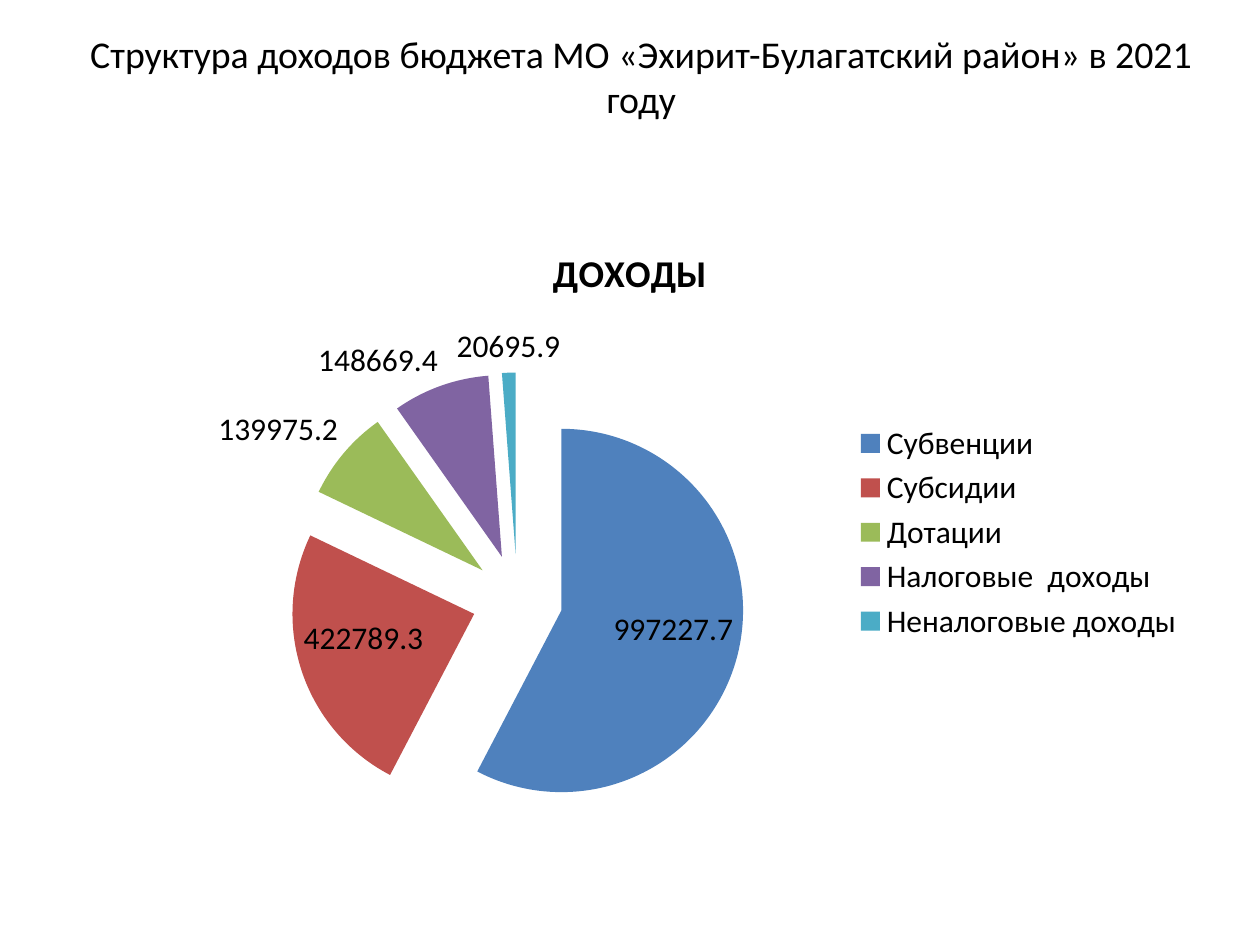
import dataclasses

import pptx
import pptx.chart.data
import pptx.dml.color
import pptx.enum.chart
import pptx.enum.text
import pptx.oxml
import pptx.oxml.ns
import pptx.util


@dataclasses.dataclass(frozen=True)
class Theme:
    font: str = "Calibri"
    text: str = "000000"
    background: str = "FFFFFF"
    slices: tuple = ("4F81BD", "C0504D", "9BBB59", "8064A2", "4BACC6")
    heading_size: float = 21.6
    chart_size: float = 18


THEME = Theme()
SLIDE_WIDTH = pptx.util.Inches(10)
SLIDE_HEIGHT = pptx.util.Inches(7.5)
EXPLOSION = 25  # percent of the pie radius

INCOME = {
    "Субвенции": 997227.7,
    "Субсидии": 422789.3,
    "Дотации": 139975.2,
    "Налоговые  доходы": 148669.4,
    "Неналоговые доходы": 20695.9,
}


def color(value):
    return pptx.dml.color.RGBColor.from_string(value)


def inches(box):
    return [pptx.util.Inches(length) for length in box]


def style_font(font, size, bold=False):
    font.name = THEME.font
    font.size = pptx.util.Pt(size)
    font.bold = bold
    font.color.rgb = color(THEME.text)


def place_title(slide, box, text):
    title = slide.shapes.title
    title.left, title.top, title.width, title.height = inches(box)
    frame = title.text_frame
    frame.text = text
    frame.word_wrap = True
    frame.auto_size = pptx.enum.text.MSO_AUTO_SIZE.NONE
    frame.vertical_anchor = pptx.enum.text.MSO_ANCHOR.MIDDLE
    paragraph = frame.paragraphs[0]
    paragraph.alignment = pptx.enum.text.PP_ALIGN.CENTER
    style_font(paragraph.font, THEME.heading_size)


def place_income_pie(slide, box, name, income):
    data = pptx.chart.data.CategoryChartData(number_format="General")
    data.categories = list(income)
    data.add_series(name, list(income.values()))
    chart = slide.shapes.add_chart(
        pptx.enum.chart.XL_CHART_TYPE.PIE, *inches(box), data
    ).chart
    style_font(chart.font, THEME.chart_size)

    # Heading and legend
    chart.has_title = True
    chart.chart_title.include_in_layout = False
    heading = chart.chart_title.text_frame
    heading.text = name
    style_font(heading.paragraphs[0].font, THEME.heading_size, bold=True)
    chart.has_legend = True
    chart.legend.position = pptx.enum.chart.XL_LEGEND_POSITION.RIGHT
    chart.legend.include_in_layout = False
    style_font(chart.legend.font, THEME.chart_size)

    # Separated slices
    plot = chart.plots[0]
    plot.vary_by_categories = True
    series = plot.series[0]
    explosion = pptx.oxml.parse_xml(
        f'<c:explosion {pptx.oxml.ns.nsdecls("c")} val="{EXPLOSION}"/>'
    )
    series._element.find(pptx.oxml.ns.qn("c:tx")).addnext(explosion)
    for index, slice_color in enumerate(THEME.slices):
        fill = series.points[index].format.fill
        fill.solid()
        fill.fore_color.rgb = color(slice_color)

    # Value labels
    plot.has_data_labels = True
    labels = plot.data_labels
    labels.show_value = True
    labels.show_percentage = False
    style_font(labels.font, THEME.chart_size)


def main():
    presentation = pptx.Presentation()
    presentation.slide_width = SLIDE_WIDTH
    presentation.slide_height = SLIDE_HEIGHT
    slide = presentation.slides.add_slide(presentation.slide_layouts[5])
    slide.background.fill.solid()
    slide.background.fill.fore_color.rgb = color(THEME.background)

    place_title(
        slide,
        (0.59, 0.21, 9, 0.79),
        "Структура доходов бюджета МО «Эхирит-Булагатский район» в 2021 году",
    )
    place_income_pie(slide, (0.5, 1.75, 9, 4.95), "ДОХОДЫ", INCOME)
    presentation.save("out.pptx")


if __name__ == "__main__":
    main()
